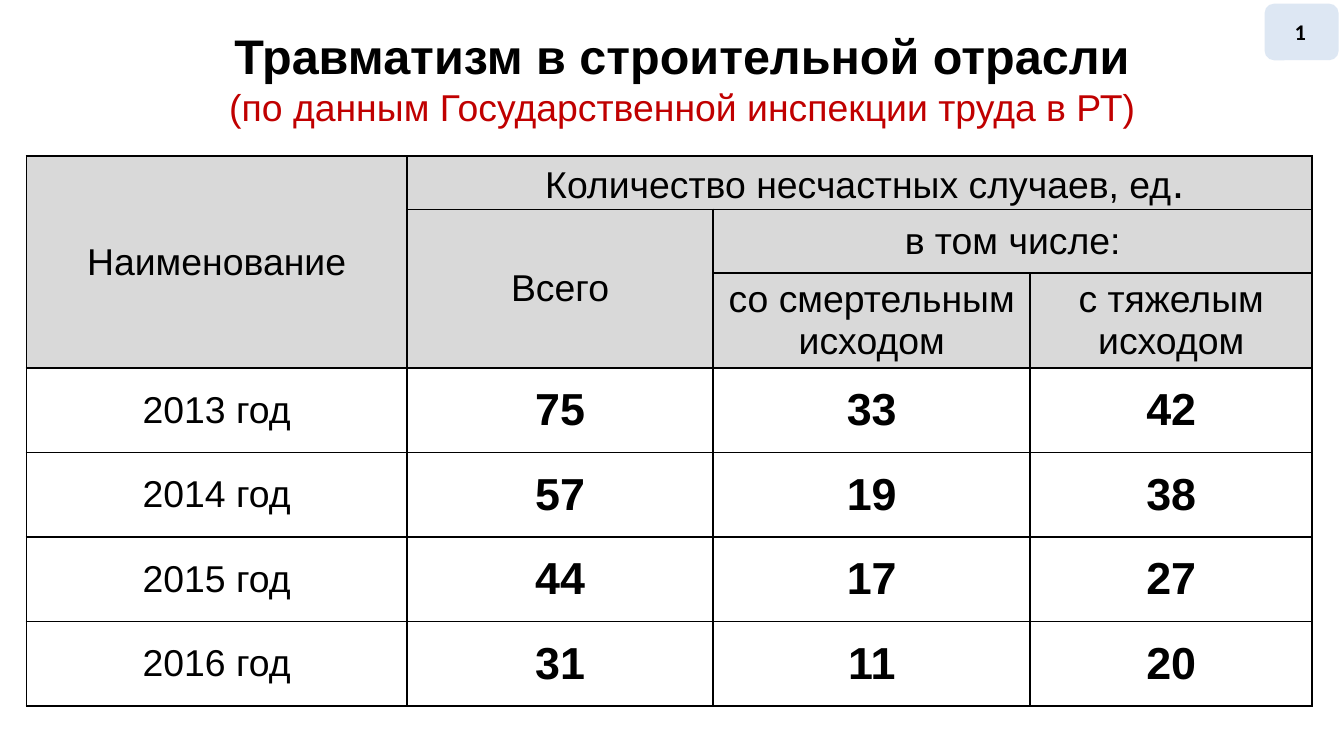
from lxml.etree import SubElement
from pptx import Presentation
from pptx.dml.color import RGBColor
from pptx.enum.shapes import MSO_SHAPE
from pptx.enum.text import MSO_ANCHOR, PP_ALIGN
from pptx.oxml.ns import qn
from pptx.util import Cm, Pt

BLACK = RGBColor(0x00, 0x00, 0x00)
RED = RGBColor(0xC0, 0x00, 0x00)
GREY = RGBColor(0xD9, 0xD9, 0xD9)
PALE_BLUE = RGBColor(0xDD, 0xE7, 0xF3)

COLS = [7.19, 5.79, 5.99, 5.33]
ROWS = [1.01, 1.2, 1.8, 1.59, 1.6, 1.6, 1.6]
HEADER_ROWS = 3
HEADERS = [
    (0, 0, 2, 0, "Наименование"),
    (0, 1, 0, 3, " Количество несчастных случаев, ед"),
    (1, 1, 2, 1, "Всего"),
    (1, 2, 1, 3, "в том числе:"),
    (2, 2, 2, 2, "со смертельным исходом"),
    (2, 3, 2, 3, "с тяжелым исходом"),
]
DATA = [
    ("2013 год", 75, 33, 42),
    ("2014 год", 57, 19, 38),
    ("2015 год", 44, 17, 27),
    ("2016 год", 31, 11, 20),
]


def add_text(p, text, size=20, bold=False, color=BLACK, font="Arial"):
    p.alignment = PP_ALIGN.CENTER
    r = p.add_run()
    r.text = text
    r.font.name = font
    r.font.size = Pt(size)
    r.font.bold = bold
    r.font.color.rgb = color


def place(sp, left, top, width, height):
    sp.left, sp.top, sp.width, sp.height = Cm(left), Cm(top), Cm(width), Cm(height)


def add_title(s, *box):
    sp = s.shapes.title
    place(sp, *box)
    tf = sp.text_frame
    tf.word_wrap = True
    tf.vertical_anchor = MSO_ANCHOR.TOP
    add_text(tf.paragraphs[0], "Травматизм в строительной отрасли", size=26, bold=True)
    add_text(tf.add_paragraph(), "(по данным Государственной инспекции труда в РТ)", color=RED)


def add_page_number(s, left, top, width, height):
    sp = s.shapes.add_shape(MSO_SHAPE.ROUNDED_RECTANGLE, Cm(left), Cm(top), Cm(width), Cm(height))
    sp.shadow.inherit = False
    sp.fill.solid()
    sp.fill.fore_color.rgb = PALE_BLUE
    sp.line.fill.background()
    tf = sp.text_frame
    tf.vertical_anchor = MSO_ANCHOR.MIDDLE
    tf.margin_left = Cm(0.2)
    add_text(tf.paragraphs[0], "1", size=12, bold=True, font="Calibri")


def format_cell(cell, header):
    cell.vertical_anchor = MSO_ANCHOR.MIDDLE
    cell.margin_left = cell.margin_right = Cm(0.18)
    cell.margin_top = cell.margin_bottom = 0
    tcPr = cell._tc.get_or_add_tcPr()
    for side in ("lnL", "lnR", "lnT", "lnB"):
        ln = SubElement(tcPr, qn(f"a:{side}"), w=str(Pt(1)))
        fill = SubElement(ln, qn("a:solidFill"))
        SubElement(fill, qn("a:srgbClr"), val=str(BLACK))
    if header:
        cell.fill.solid()
        cell.fill.fore_color.rgb = GREY
    else:
        cell.fill.background()


def add_accident_table(s, left, top):
    frame = s.shapes.add_table(len(ROWS), len(COLS), Cm(left), Cm(top), Cm(sum(COLS)), Cm(sum(ROWS)))
    table = frame.table
    table.first_row = table.horz_banding = False
    for col, width in zip(table.columns, COLS):
        col.width = Cm(width)
    for i, (row, height) in enumerate(zip(table.rows, ROWS)):
        row.height = Cm(height)
        for cell in row.cells:
            format_cell(cell, i < HEADER_ROWS)
    for row, col, last_row, last_col, text in HEADERS:
        cell = table.cell(row, col)
        if (row, col) != (last_row, last_col):
            cell.merge(table.cell(last_row, last_col))
        add_text(cell.text_frame.paragraphs[0], text)
    add_text(table.cell(0, 1).text_frame.paragraphs[0], ".", size=24)
    for i, values in enumerate(DATA, HEADER_ROWS):
        for j, value in enumerate(values):
            p = table.cell(i, j).text_frame.paragraphs[0]
            add_text(p, str(value), size=24 if j else 20, bold=j > 0)


def main():
    prs = Presentation()
    prs.slide_width, prs.slide_height = Cm(25.4), Cm(14.29)
    s = prs.slides.add_slide(prs.slide_layouts[5])
    add_title(s, 1.5, 0.36, 22.8, 2.3)
    add_page_number(s, 23.9, 0.07, 1.4, 1.07)
    add_accident_table(s, 0.5, 2.95)
    prs.save("out.pptx")


if __name__ == "__main__":
    main()
